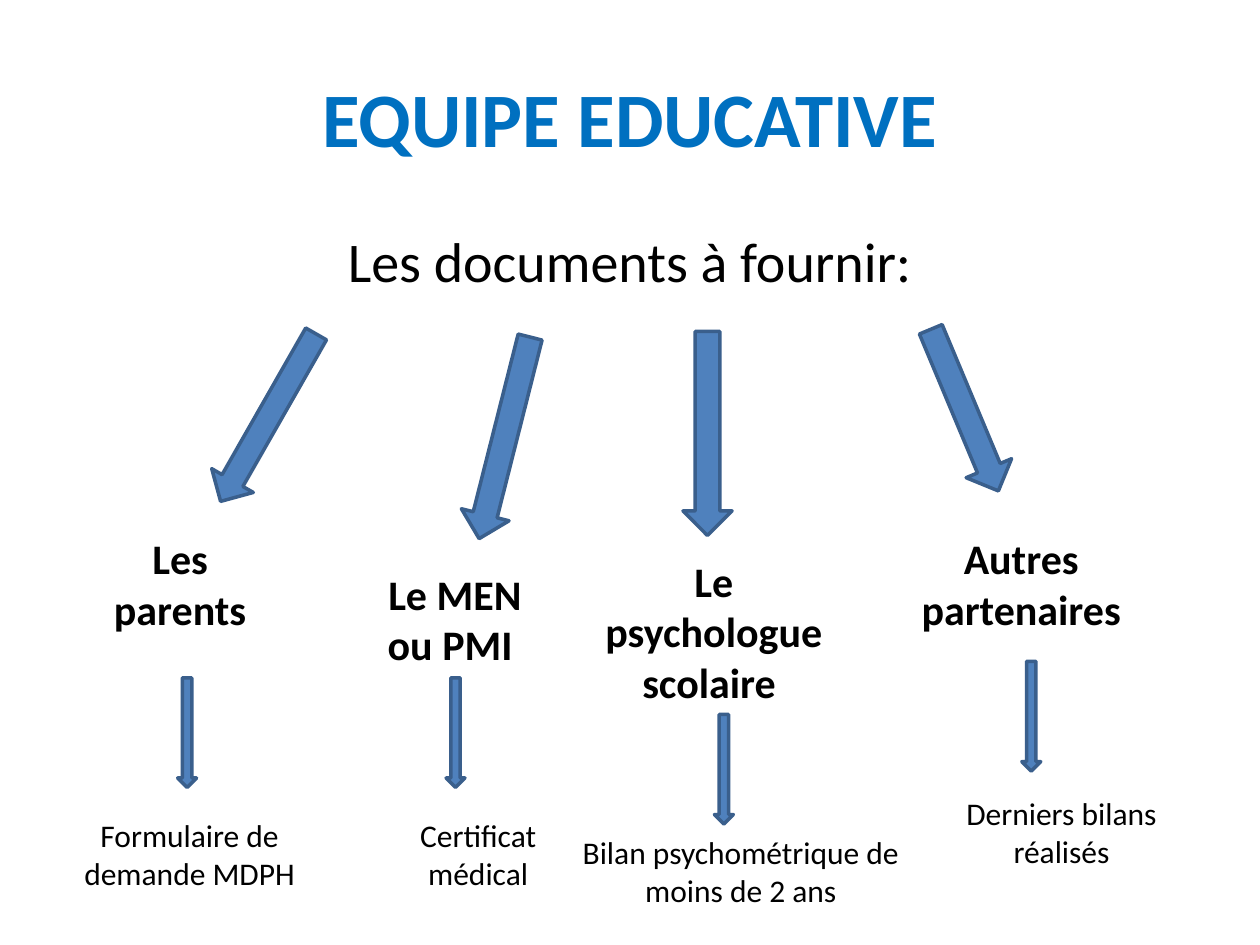
import pptx
import pptx.dml.color
import pptx.enum.shapes
import pptx.enum.text
import pptx.util
from lxml import etree
from pptx.util import Inches

COLORS = {"title": "0070C0", "text": "000000", "arrow": "4F81BD", "outline": "3A5F8C"}
FONT = "Calibri"


def write_text(shape, text, size, color="text", bold=False):
    """Fill a shape with one centred, wrapped paragraph and return it."""
    shape.text_frame.word_wrap = True
    paragraph = shape.text_frame.paragraphs[0]
    paragraph.text = text
    paragraph.alignment = pptx.enum.text.PP_ALIGN.CENTER
    paragraph.font.name = FONT
    paragraph.font.size = pptx.util.Pt(size)
    paragraph.font.bold = bold
    paragraph.font.color.rgb = pptx.dml.color.RGBColor.from_string(COLORS[color])
    return paragraph


def place(shape, left, top, width, height):
    shape.left, shape.top = Inches(left), Inches(top)
    shape.width, shape.height = Inches(width), Inches(height)


presentation = pptx.Presentation()
presentation.slide_width, presentation.slide_height = Inches(10), Inches(7.5)
slide = presentation.slides.add_slide(presentation.slide_layouts[1])

title = slide.shapes.title
place(title, 0.5, 0.3, 9, 1.25)
write_text(title, "EQUIPE EDUCATIVE", 44, "title", bold=True)

body = slide.placeholders[1]
place(body, 0.5, 1.75, 9, 4.95)
paragraph = write_text(body, "Les documents à fournir:", 32)
properties = paragraph._p.get_or_add_pPr()
properties.set("marL", "0")
properties.set("indent", "0")
etree.SubElement(properties, pptx.oxml.ns.qn("a:buNone"))
# a:buNone must come before the default run properties
properties.append(properties.find(pptx.oxml.ns.qn("a:defRPr")))

# left, top, width, height, rotation
branch_arrows = [
    (1.94, 2.55, 0.38, 1.53, 29.7),
    (3.81, 2.65, 0.39, 1.65, 14.2),
    (5.42, 2.63, 0.39, 1.62, 0),
    (7.46, 2.56, 0.39, 1.39, 337.3),
]
document_arrows = [
    (left, top, 0.15, 0.87, 0)
    for left, top in [(1.41, 5.38), (3.54, 5.38), (5.67, 5.67), (8.11, 5.25)]
]
for left, top, width, height, rotation in branch_arrows + document_arrows:
    arrow = slide.shapes.add_shape(
        pptx.enum.shapes.MSO_SHAPE.DOWN_ARROW,
        Inches(left), Inches(top), Inches(width), Inches(height))
    arrow.rotation = rotation
    arrow.shadow.inherit = False
    arrow.fill.solid()
    arrow.fill.fore_color.rgb = pptx.dml.color.RGBColor.from_string(COLORS["arrow"])
    arrow.line.color.rgb = pptx.dml.color.RGBColor.from_string(COLORS["outline"])
    arrow.line.width = pptx.util.Pt(2)

# text, left, top, width, height
participants = [
    ("Les parents", 0.8, 4.18, 1.26, 0.91),
    ("Le MEN ou PMI ", 2.95, 4.46, 1.32, 0.91),
    ("Le psychologue scolaire ", 4.64, 4.36, 2.05, 1.31),
    ("Autres partenaires", 7.2, 4.18, 1.81, 0.91),
]
documents = [
    ("Formulaire de demande MDPH", 0.52, 6.43, 1.97, 0.71),
    ("Certificat médical", 3.19, 6.43, 1.21, 0.71),
    ("Bilan psychométrique de moins de 2 ans", 4.48, 6.56, 2.8, 0.71),
    ("Derniers bilans réalisés", 7.44, 6.25, 1.97, 0.71),
]
for labels, size, bold in [(participants, 24, True), (documents, 18, False)]:
    for text, left, top, width, height in labels:
        label = slide.shapes.add_textbox(
            Inches(left), Inches(top), Inches(width), Inches(height))
        label.text_frame.auto_size = pptx.enum.text.MSO_AUTO_SIZE.SHAPE_TO_FIT_TEXT
        write_text(label, text, size, bold=bold)

presentation.save("out.pptx")
